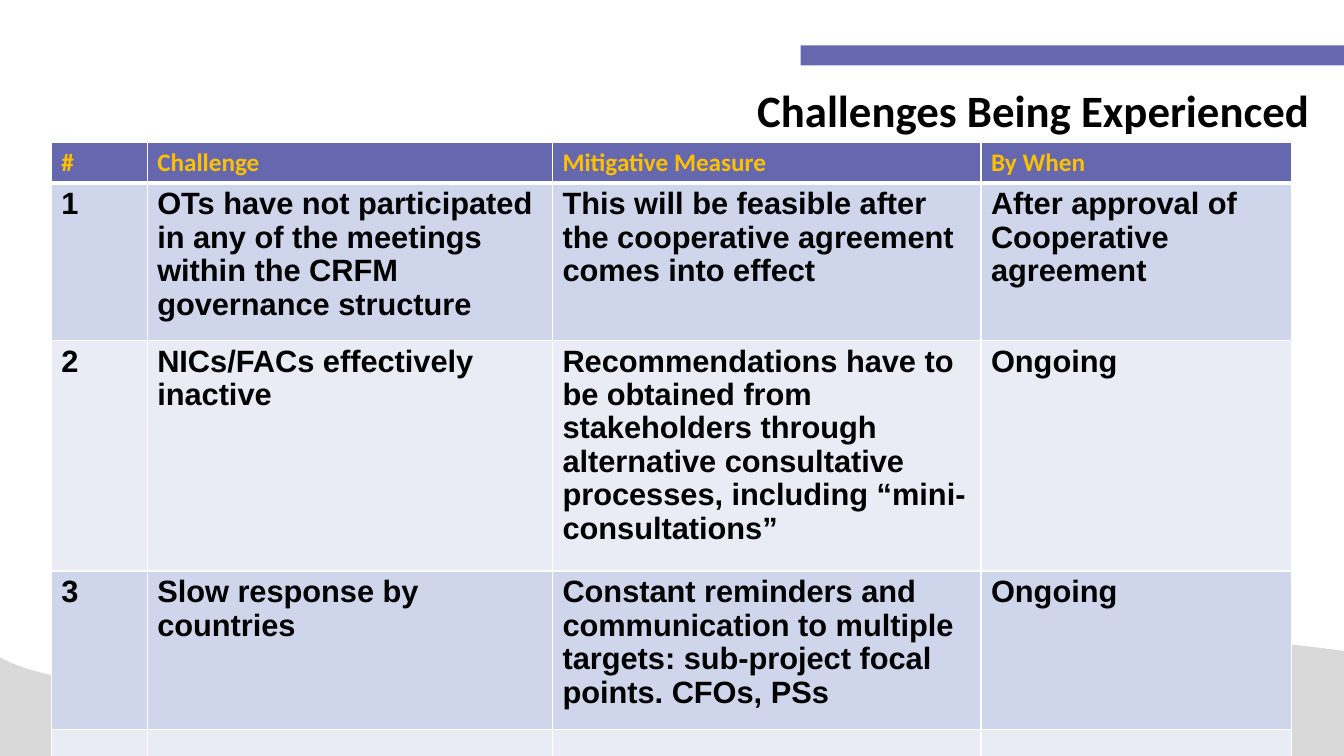
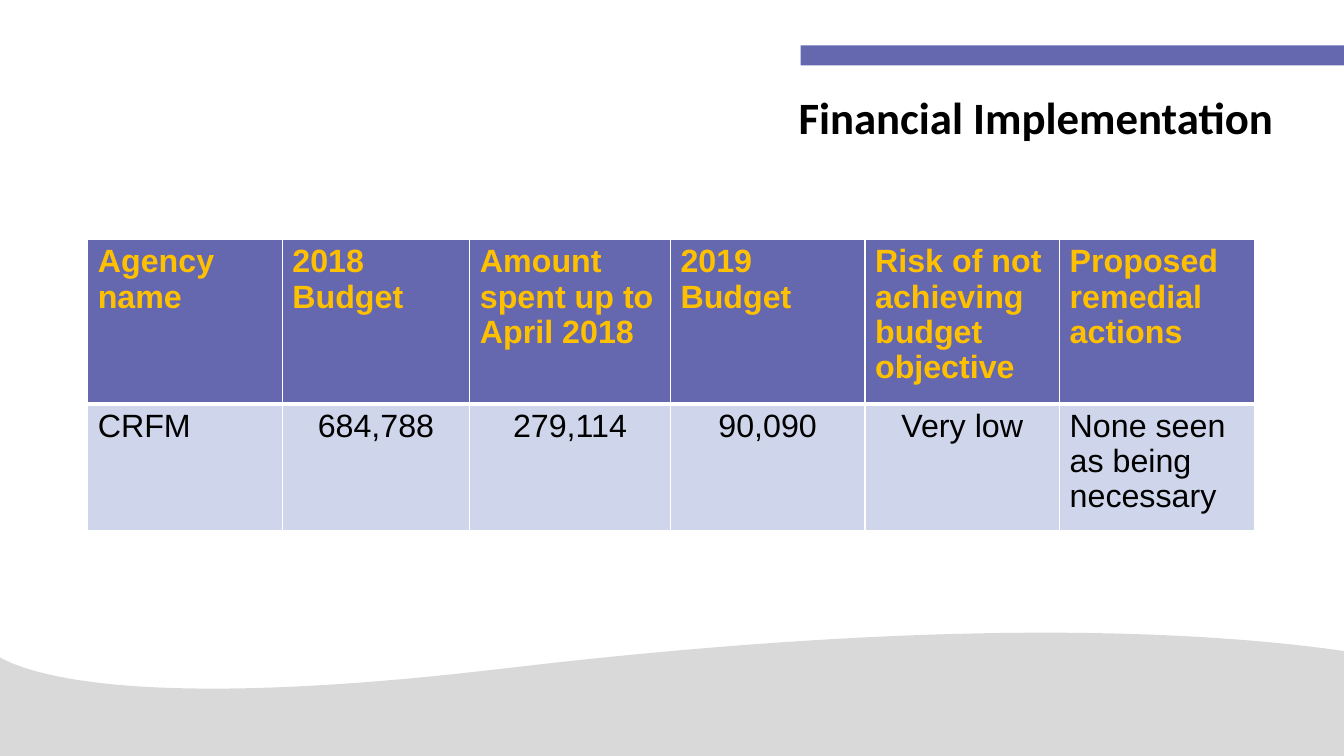
import pptx
import pptx.util
import pptx.dml.color
import pptx.enum.shapes
import pptx.enum.text
import pptx.oxml
import pptx.oxml.ns

Inches = pptx.util.Inches
Pt = pptx.util.Pt
ALIGN = pptx.enum.text.PP_ALIGN
ANCHOR = pptx.enum.text.MSO_ANCHOR

# Shared palette
PURPLE, GOLD, GREY = "6568AE", "FFC000", "D9D9D9"
BLACK, WHITE = "000000", "FFFFFF"
ROW_BANDS = ("CFD5EA", "E9EBF5")

CHALLENGES = [
    ["#", "Challenge", "Mitigative Measure", "By When"],
    ["1",
     "OTs have not participated in any of the meetings within the CRFM governance structure",
     "This will be feasible after the cooperative agreement comes into effect",
     "After approval of Cooperative agreement"],
    ["2", "NICs/FACs effectively inactive",
     "Recommendations have to be obtained from stakeholders through alternative "
     "consultative processes, including “mini-consultations”",
     "Ongoing"],
    ["3", "Slow response by countries",
     "Constant reminders and communication to multiple targets: "
     "sub-project focal points. CFOs, PSs",
     "Ongoing"],
    ["", "", "", ""],
]
BUDGET = [
    ["Agency name", "2018 Budget", "Amount spent up to April 2018", "2019 Budget",
     "Risk of not achieving budget objective", "Proposed remedial actions"],
    ["CRFM", "684,788", "279,114", "90,090", "Very low", "None seen as being necessary"],
]


def rgb(hex_string):
    return pptx.dml.color.RGBColor.from_string(hex_string)


def write_text(frame, text, font="Arial", size=22, color=BLACK, bold=False,
               align=ALIGN.LEFT, spacing=1.0):
    """Write one formatted paragraph into a text frame."""
    frame.word_wrap = True
    paragraph = frame.paragraphs[0]
    paragraph.alignment = align
    paragraph.line_spacing = spacing
    style = paragraph.font
    if text:
        style = paragraph.add_run()
        style.text = text
        style = style.font
    style.name, style.size, style.bold = font, Pt(size), bold
    style.color.rgb = rgb(color)


def paint(shape, color):
    shape.fill.solid()
    shape.fill.fore_color.rgb = rgb(color)
    shape.line.fill.background()
    shape.shadow.inherit = False


def curve(start, control_1, control_2, end, steps=40):
    """Points along a cubic curve, without its start."""
    for step in range(1, steps + 1):
        t = step / steps
        weights = ((1 - t) ** 3, 3 * t * (1 - t) ** 2, 3 * t * t * (1 - t), t ** 3)
        knots = (start, control_1, control_2, end)
        yield tuple(sum(w * knot[axis] for w, knot in zip(weights, knots))
                    for axis in (0, 1))


def add_wave(slide, left, top, width, height):
    """Grey wave; its outline is measured from the top left of the box."""
    right_edge, crest, left_edge = (width, 0.3), (5.04, 0.47), (0, 0.35)
    outline = [right_edge,
               *curve(right_edge, (11.67, 0.06), (9.04, 0), crest),
               *curve(crest, (1.35, 0.91), (0.28, 0.52), left_edge),
               (0, height)]
    points = [(Inches(left + x), Inches(top + y)) for x, y in outline]
    builder = slide.shapes.build_freeform(Inches(left + width), Inches(top + height))
    builder.add_line_segments(points, close=True)
    paint(builder.convert_to_shape(), GREY)


def add_bar(slide, left, top, width, height):
    bar = slide.shapes.add_shape(pptx.enum.shapes.MSO_SHAPE.RECTANGLE, Inches(left),
                                 Inches(top), Inches(width), Inches(height))
    paint(bar, PURPLE)


def add_titled_slide(deck, heading, left, top, width, height=0.64):
    """Slide with the shared wave, bar and title style."""
    slide = deck.slides.add_slide(deck.slide_layouts[5])
    add_wave(slide, -0.02, 6.16, 13.36, 1.34)
    add_bar(slide, 7.94, 0.45, 5.4, 0.2)
    title = slide.shapes.title
    title.left, title.top = Inches(left), Inches(top)
    title.width, title.height = Inches(width), Inches(height)
    title.text_frame.auto_size = pptx.enum.text.MSO_AUTO_SIZE.NONE
    title.text_frame.vertical_anchor = ANCHOR.TOP
    write_text(title.text_frame, heading, font="Calibri", size=32, bold=True)
    return slide


def set_borders(cell, **widths):
    """White cell borders; the sides L, R, T and B have widths in points."""
    properties = cell._tc.get_or_add_tcPr()
    for side in "LRTB":
        properties.append(pptx.oxml.parse_xml(
            f'<a:ln{side} {pptx.oxml.ns.nsdecls("a")} w="{Pt(widths.get(side, 1))}">'
            f'<a:solidFill><a:srgbClr val="{WHITE}"/></a:solidFill></a:ln{side}>'))


def add_grid(slide, left, top, columns, rows, content, header, body, centred=()):
    """Banded table; header and body hold the text formats."""
    grid = slide.shapes.add_table(len(rows), len(columns), Inches(left), Inches(top),
                                  Inches(sum(columns)), Inches(sum(rows))).table
    for column, width in zip(grid.columns, columns):
        column.width = Inches(width)
    for r, (row, height) in enumerate(zip(grid.rows, rows)):
        row.height = Inches(height)
        for c, cell in enumerate(row.cells):
            set_borders(cell, T=3 if r == 1 else 1, B=3 if r == 0 else 1)
            cell.fill.solid()
            cell.fill.fore_color.rgb = rgb(ROW_BANDS[(r - 1) % 2] if r else PURPLE)
            align = ALIGN.CENTER if r and c in centred else ALIGN.LEFT
            write_text(cell.text_frame, content[r][c], align=align,
                       **(body if r else header))


def challenges_slide(deck):
    slide = add_titled_slide(deck, "Challenges Being Experienced", 7.41, 0.77, 5.84)
    add_grid(slide, 0.51, 1.41, [0.95, 4.02, 4.25, 3.08], [0.4, 1.56, 2.29, 1.57, 0.42],
             CHALLENGES,
             header=dict(font="Calibri", size=18, color=GOLD, bold=True),
             body=dict(size=22, bold=True, spacing=0.97))


def finance_slide(deck):
    slide = add_titled_slide(deck, "Financial Implementation", 7.82, 0.84, 5.41)
    add_grid(slide, 0.87, 2.38, [1.93, 1.86, 1.99, 1.93, 1.93, 1.93], [1.63, 1.25],
             BUDGET,
             header=dict(size=23, color=GOLD, bold=True, spacing=0.97),
             body=dict(size=23, spacing=0.97), centred=range(1, 5))


def main():
    deck = pptx.Presentation()
    deck.slide_width, deck.slide_height = Inches(13.33), Inches(7.5)
    challenges_slide(deck)
    finance_slide(deck)
    deck.save("out.pptx")


if __name__ == "__main__":
    main()
